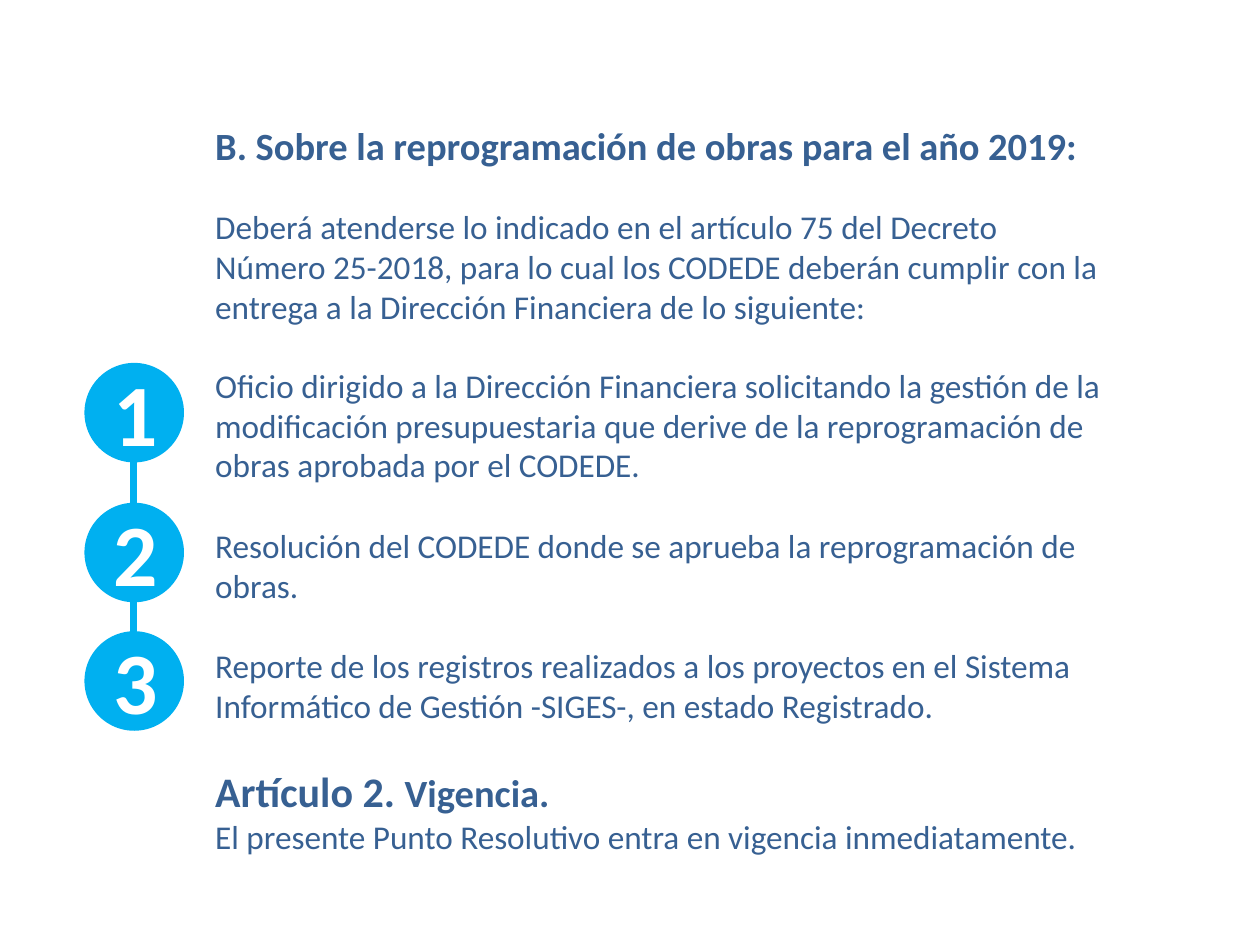
from dataclasses import dataclass

from lxml import etree
from pptx import Presentation
from pptx.dml.color import RGBColor
from pptx.enum.shapes import MSO_CONNECTOR, MSO_SHAPE
from pptx.enum.text import MSO_AUTO_SIZE
from pptx.oxml.ns import qn
from pptx.util import Emu, Pt

OVAL = MSO_SHAPE.OVAL
LINE = MSO_CONNECTOR.STRAIGHT
GROW = MSO_AUTO_SIZE.SHAPE_TO_FIT_TEXT
NAVY = RGBColor(0x37, 0x60, 0x92)
CYAN = RGBColor(0x00, 0xB0, 0xF0)
WHITE = RGBColor(0xFF, 0xFF, 0xFF)
SCALE = 9144  # EMU per px, at 100 px to the inch

BODY = {"size": Pt(19), "bold": False}
HEAD = {"size": Pt(22), "bold": True}
LEAD = {"size": Pt(24), "bold": True}
DIGIT = {"size": Pt(50), "bold": True}


@dataclass
class Para:
    runs: list[tuple[str, dict]]
    gap: float = 0  # points before


@dataclass
class Step:
    label: str
    top: int


PARAS = [
    Para([("B. Sobre la reprogramación de obras para el año 2019:", HEAD)]),
    Para([("Deberá atenderse lo indicado en el artículo 75 del Decreto Número "
           "25-2018, para lo cual los CODEDE deberán cumplir con la entrega a "
           "la Dirección Financiera de lo siguiente:", BODY)], 22),
    Para([("Oficio dirigido a la Dirección Financiera solicitando la gestión "
           "de la modificación presupuestaria que derive de la reprogramación "
           "de obras aprobada por el CODEDE.", BODY)], 22),
    Para([("Resolución del CODEDE donde se aprueba la reprogramación de "
           "obras.", BODY)], 23.2),
    Para([("Reporte de los registros realizados a los proyectos en el Sistema "
           "Informático de Gestión -SIGES-, en estado Registrado.", BODY)], 23.2),
    Para([("Artículo 2. ", LEAD), ("Vigencia.", HEAD)], 23.2),
    Para([("El presente Punto Resolutivo entra en vigencia inmediatamente.",
           BODY)]),
]
STEPS = [Step("1", 288), Step("2", 399), Step("3", 501)]


def px(num: int) -> Emu:
    return Emu(num * SCALE)


def add_text(shapes, box: tuple, paras: list[Para], color: RGBColor) -> None:
    frame = shapes.add_textbox(*map(px, box)).text_frame
    frame.word_wrap = True
    frame.auto_size = GROW
    for i, para in enumerate(paras):
        line = frame.add_paragraph() if i else frame.paragraphs[0]
        if para.gap:
            line.space_before = Pt(para.gap)
        for text, style in para.runs:
            run = line.add_run()
            run.text = text
            run.font.color.rgb = color
            for name, value in {"name": "Calibri", **style}.items():
                setattr(run.font, name, value)


def add_link(shapes, x: int, top: int, end: int) -> None:
    link = shapes.add_connector(LINE, px(x), px(top), px(x), px(end))
    link.line.color.rgb = CYAN
    link.line.width = Pt(4.5)
    etree.SubElement(link._element.spPr, qn("a:effectLst"))


def add_step(shapes, step: Step) -> None:
    group = shapes.add_group_shape().shapes
    disc = group.add_shape(OVAL, px(67), px(step.top), px(79), px(79))
    disc.shadow.inherit = False
    disc.fill.solid()
    disc.fill.fore_color.rgb = CYAN
    disc.line.fill.background()
    add_text(group, (80, step.top - 8, 63, 94),
             [Para([(step.label, DIGIT)])], WHITE)


def main() -> None:
    deck = Presentation()
    deck.slide_width, deck.slide_height = px(1000), px(750)
    shapes = deck.slides.add_slide(deck.slide_layouts[6]).shapes

    # Resolution text
    add_text(shapes, (161, 92, 732, 626), PARAS, NAVY)

    # Numbered steps, joined by a line behind them
    add_link(shapes, 106, 351, 525)
    for step in STEPS:
        add_step(shapes, step)

    deck.save("out.pptx")


if __name__ == "__main__":
    main()
